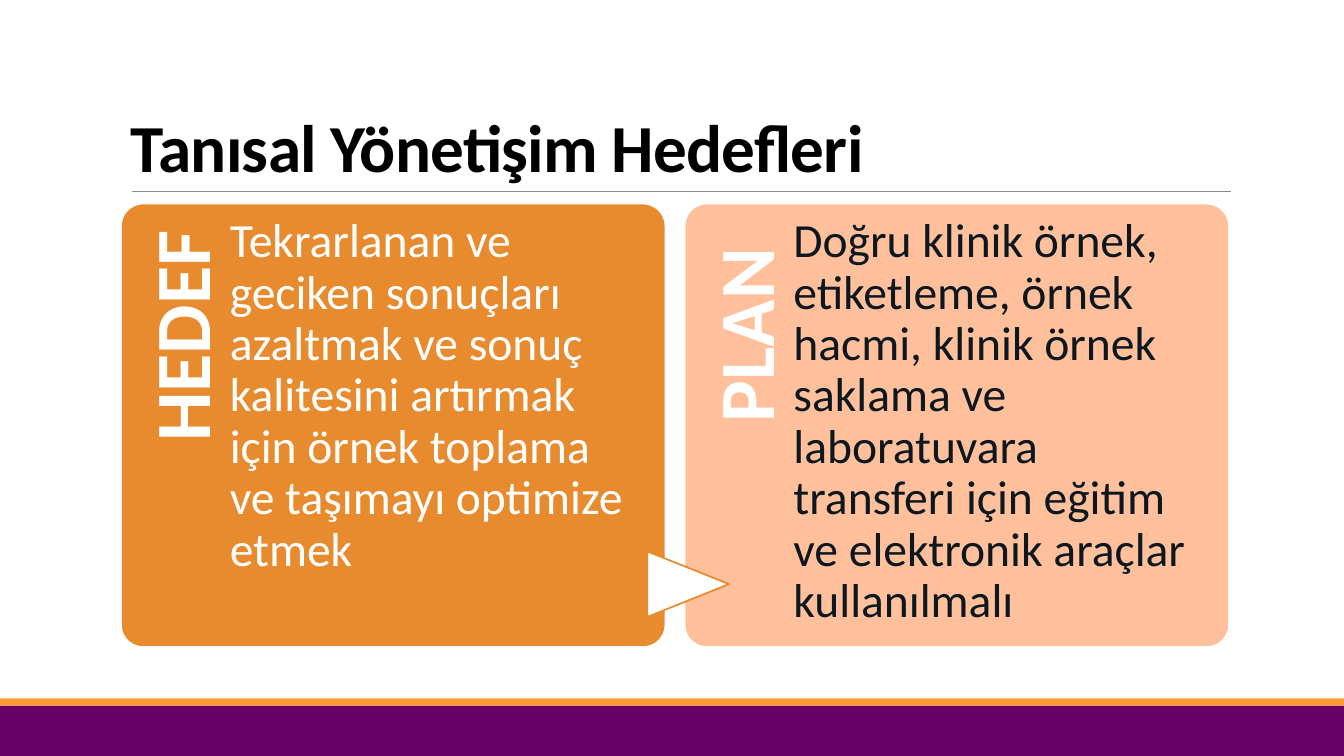
from pptx import Presentation
from pptx.dml.color import RGBColor
from pptx.enum.shapes import MSO_CONNECTOR, MSO_SHAPE as SHAPE
from pptx.enum.text import MSO_ANCHOR as ANCHOR, PP_ALIGN as ALIGN
from pptx.oxml.ns import qn
from pptx.util import Pt
from lxml import etree

PX = 9144  # EMU per px, 100 px to the inch
FONT = "Calibri"
COLORS = {
    "purple": "660066", "amber": "FF9933", "rule": "8C8C8C",
    "orange": "E78B2E", "peach": "FFC09B",
    "white": "FFFFFF", "black": "000000", "ink": "0D171F",
}
CARD_TOP, CARD_W, CARD_H = 202, 540, 440
CARDS = [
    (120, "orange", "HEDEF", "white",
     "Tekrarlanan ve geciken sonuçları azaltmak ve sonuç kalitesini "
     "artırmak için örnek toplama ve taşımayı optimize etmek"),
    (679, "peach", "PLAN ", "ink",
     "Doğru klinik örnek, etiketleme, örnek hacmi, klinik örnek saklama ve "
     "laboratuvara transferi için eğitim ve elektronik araçlar kullanılmalı"),
]


def rgb(name):
    return RGBColor.from_string(COLORS[name])


def emu(*lengths):
    return [n * PX for n in lengths]


def add_block(s, kind, box, fill, line=None):
    sp = s.shapes.add_shape(kind, *emu(*box))
    sp.shadow.inherit = False
    sp.fill.solid()
    sp.fill.fore_color.rgb = rgb(fill)
    if line:
        sp.line.color.rgb = rgb(line)
        sp.line.width = Pt(1.25)
    else:
        sp.line.fill.background()
    return sp


def add_text(s, box, text, size, color, insets, bold=False,
             spacing=0.9, align=ALIGN.LEFT, anchor=ANCHOR.TOP):
    """Add a wrapped one-paragraph box; insets run left, top, right, bottom."""
    sp = s.shapes.add_textbox(*emu(*box))
    tf = sp.text_frame
    tf.word_wrap = True
    tf.vertical_anchor = anchor
    (tf.margin_left, tf.margin_top,
     tf.margin_right, tf.margin_bottom) = emu(*insets)
    p = tf.paragraphs[0]
    p.text = text
    p.alignment = align
    p.line_spacing = spacing
    p.font.name = FONT
    p.font.size = Pt(size)
    p.font.bold = bold
    p.font.color.rgb = rgb(color)
    return sp


def add_rule(s, x1, x2, y):
    ln = s.shapes.add_connector(MSO_CONNECTOR.STRAIGHT, *emu(x1, y, x2, y))
    ln.line.color.rgb = rgb("rule")
    ln.line.width = Pt(0.5)
    etree.SubElement(ln._element.spPr, qn("a:effectLst"))


def add_title(s, text):
    sp = add_text(s, (120, 31, 1100, 159), text, 48, "black", (10, 5, 10, 5),
                  bold=True, spacing=0.85, anchor=ANCHOR.BOTTOM)
    r = sp.text_frame.paragraphs[0].runs[0]
    r.font._element.set("spc", "-50")


def add_card(s, x, fill, label, ink, body):
    card = add_block(s, SHAPE.ROUNDED_RECTANGLE,
                     (x, CARD_TOP, CARD_W, CARD_H), fill, "white")
    card.adjustments[0] = 0.05
    tag = add_text(s, (x - 126, 328, 361, 108), label, 56, "white",
                   (0, 21, 27, 0), bold=True, align=ALIGN.RIGHT)
    tag.rotation = 270
    add_text(s, (x + 108, CARD_TOP, 403, CARD_H), body, 34, ink, (0, 13, 0, 0))


def main():
    prs = Presentation()
    prs.slide_width, prs.slide_height = emu(1333, 750)
    s = prs.slides.add_slide(prs.slide_layouts[6])
    add_block(s, SHAPE.RECTANGLE, (0, 700, 1333, 50), "purple")
    add_block(s, SHAPE.RECTANGLE, (0, 693, 1333, 7), "amber")
    add_rule(s, 131, 1221, 190)
    add_title(s, "Tanısal Yönetişim Hedefleri")
    for card in CARDS:
        add_card(s, *card)
    arrow = add_block(s, SHAPE.FLOWCHART_EXTRACT, (650, 539, 65, 81),
                      "white", "orange")
    arrow.rotation = 90
    prs.save("out.pptx")


if __name__ == "__main__":
    main()
